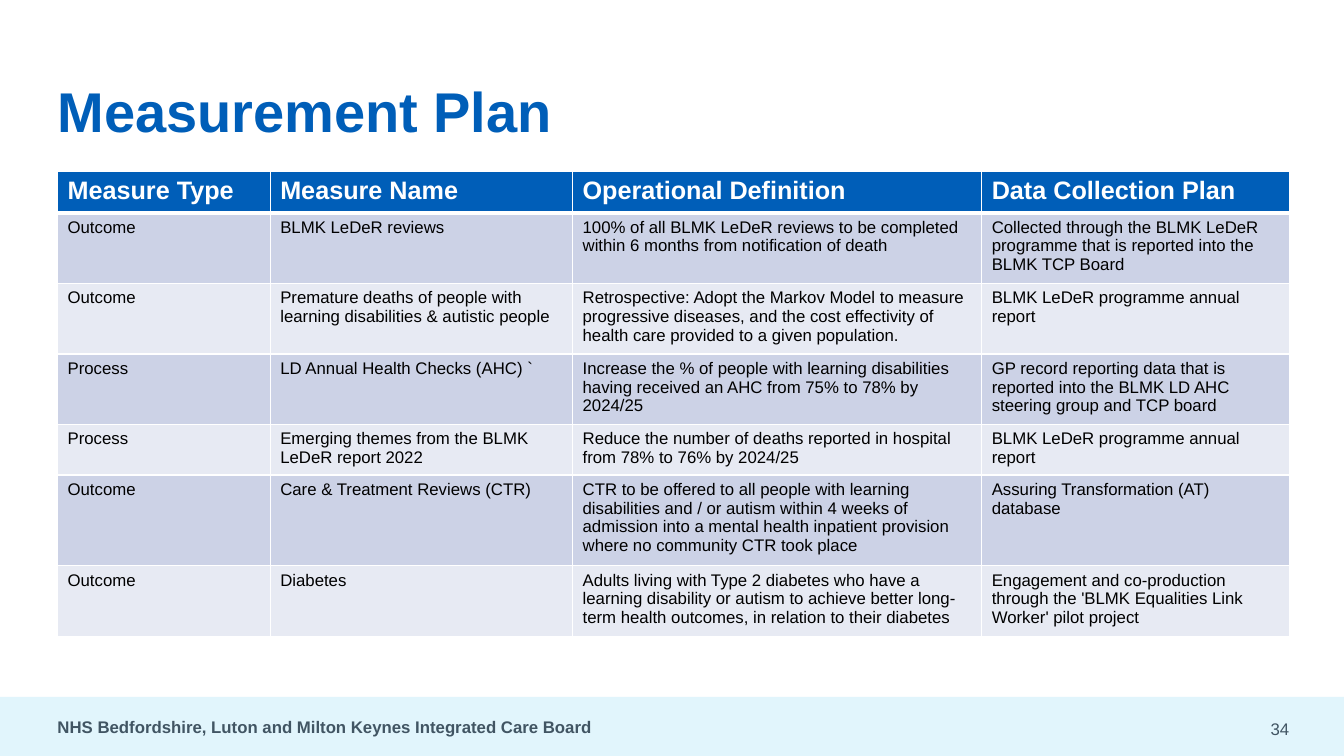
import pptx
import pptx.dml.color
import pptx.enum.shapes
import pptx.enum.text
import pptx.oxml
import pptx.oxml.ns
import pptx.util

Cm = pptx.util.Cm
Pt = pptx.util.Pt
RGBColor = pptx.dml.color.RGBColor
ALIGN = pptx.enum.text.PP_ALIGN
MIDDLE = pptx.enum.text.MSO_ANCHOR.MIDDLE

# Content
TITLE = "Measurement Plan"
FOOTER = "NHS Bedfordshire, Luton and Milton Keynes Integrated Care Board"
NUMBER = "34"
HEADS = ("Measure Type", "Measure Name", "Operational Definition", "Data Collection Plan")
PLAN = [
    ("Outcome", "BLMK LeDeR reviews",
     "100% of all BLMK LeDeR reviews to be completed within 6 months from notification of death",
     "Collected through the BLMK LeDeR programme that is reported into the BLMK TCP Board"),
    ("Outcome", "Premature deaths of people with learning disabilities & autistic people",
     "Retrospective: Adopt the Markov Model to measure progressive diseases, and the cost "
     "effectivity of health care provided to a given population.",
     "BLMK LeDeR programme annual report"),
    ("Process", "LD Annual Health Checks (AHC) `",
     "Increase the % of people with learning disabilities having received an AHC "
     "from 75% to 78% by 2024/25",
     "GP record reporting data that is reported into the BLMK LD AHC steering group and TCP board"),
    ("Process", "Emerging themes from the BLMK LeDeR report 2022",
     "Reduce the number of deaths reported in hospital from 78% to 76% by 2024/25",
     "BLMK LeDeR programme annual report"),
    ("Outcome", "Care & Treatment Reviews (CTR)",
     "CTR to be offered to all people with learning disabilities and / or autism within 4 weeks "
     "of admission into a mental health inpatient provision where no community CTR took place",
     "Assuring Transformation (AT) database"),
    ("Outcome", "Diabetes",
     "Adults living with Type 2 diabetes who have a learning disability or autism to achieve "
     "better long-term health outcomes, in relation to their diabetes",
     "Engagement and co-production through the 'BLMK Equalities Link Worker' pilot project"),
]

# Colours and formats
BLUE = RGBColor(0x00, 0x5E, 0xB8)
WHITE = RGBColor(0xFF, 0xFF, 0xFF)
BLACK = RGBColor(0x00, 0x00, 0x00)
SLATE = RGBColor(0x41, 0x55, 0x63)
SKY = RGBColor(0xE1, 0xF5, 0xFC)
BANDS = (RGBColor(0xCC, 0xD2, 0xE6), RGBColor(0xE7, 0xEA, 0xF3))

FORMATS = {
    "title": {"size": Pt(40), "bold": True, "color": BLUE},
    "head": {"size": Pt(18), "bold": True, "color": WHITE},
    "body": {"size": Pt(12), "bold": False, "color": BLACK},
    "footer": {"size": Pt(12), "bold": True, "color": SLATE},
    "number": {"size": Pt(12), "bold": False, "color": SLATE},
}

# Layout in centimetres
WIDE, HIGH = 33.87, 19.05
LEFT, TOP = 1.45, 4.32
BAR = 1.49
COLS = (5.36, 7.62, 10.31, 7.75)
ROWS = (1.04, 1.68, 1.68, 1.68, 1.2, 2.14, 1.68)


def write(frame, text, style):
    frame.text = text
    font = frame.paragraphs[0].runs[0].font
    font.name = "Arial"
    for key, value in FORMATS[style].items():
        if key == "color":
            font.color.rgb = value
        else:
            setattr(font, key, value)


def label(slide, text, style, box, align=ALIGN.LEFT):
    frame = slide.shapes.add_textbox(*map(Cm, box)).text_frame
    for side in ("left", "top", "right", "bottom"):
        setattr(frame, "margin_" + side, 0)
    frame.word_wrap = True
    frame.vertical_anchor = MIDDLE
    write(frame, text, style)
    frame.paragraphs[0].alignment = align


def edge(cell, side, width):
    line = pptx.oxml.parse_xml(
        f'<a:ln{side} {pptx.oxml.ns.nsdecls("a")} w="{Pt(width)}">'
        f'<a:solidFill><a:srgbClr val="{WHITE}"/></a:solidFill></a:ln{side}>')
    cell._tc.get_or_add_tcPr().append(line)


def main():
    deck = pptx.Presentation()
    deck.slide_width, deck.slide_height = Cm(WIDE), Cm(HIGH)
    slide = deck.slides.add_slide(deck.slide_layouts[6])

    # Footer bar
    base = HIGH - BAR
    bar = slide.shapes.add_shape(pptx.enum.shapes.MSO_SHAPE.RECTANGLE,
                                 0, Cm(base), Cm(WIDE), Cm(BAR))
    bar.shadow.inherit = False
    bar.fill.solid()
    bar.fill.fore_color.rgb = SKY
    bar.line.fill.background()

    # Title
    label(slide, TITLE, "title", (LEFT, 1.07, 24.5, 3.43))

    # Table
    table = slide.shapes.add_table(len(ROWS), len(COLS), Cm(LEFT), Cm(TOP),
                                   Cm(sum(COLS)), Cm(sum(ROWS))).table
    for col, width in zip(table.columns, COLS):
        col.width = Cm(width)
    for row, height in zip(table.rows, ROWS):
        row.height = Cm(height)
    for r, texts in enumerate([HEADS] + PLAN):
        for c, text in enumerate(texts):
            cell = table.cell(r, c)
            write(cell.text_frame, text, "body" if r else "head")
            for side in "LRTB":
                thick = (r, side) in ((0, "B"), (1, "T"))
                edge(cell, side, 3 if thick else 1)
            cell.fill.solid()
            cell.fill.fore_color.rgb = BANDS[(r - 1) % 2] if r else BLUE

    # Footer text and page number
    label(slide, FOOTER, "footer", (LEFT, base, 20.57, BAR))
    right = LEFT + sum(COLS)
    label(slide, NUMBER, "number", (right - 1.35, base + 0.1, 1.35, BAR - 0.1), ALIGN.RIGHT)

    deck.save("out.pptx")


if __name__ == "__main__":
    main()
